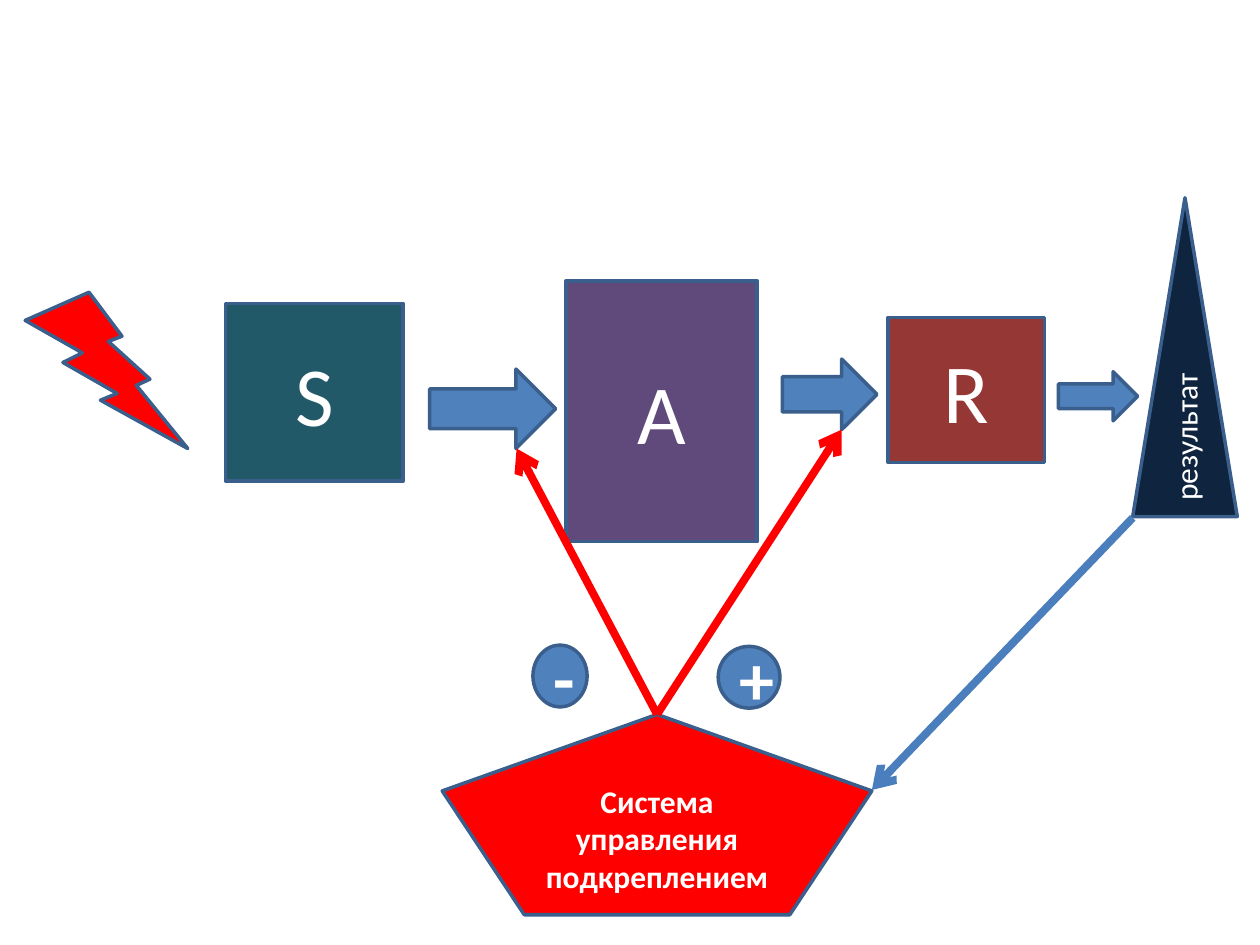
from lxml import etree
from pptx import Presentation
from pptx.dml.color import RGBColor
from pptx.enum.shapes import MSO_CONNECTOR, MSO_SHAPE
from pptx.enum.text import MSO_ANCHOR, PP_ALIGN
from pptx.oxml.ns import qn
from pptx.util import Inches, Pt

RECTANGLE, ELLIPSE = MSO_SHAPE.RECTANGLE, MSO_SHAPE.OVAL
ARROW, BOLT = MSO_SHAPE.RIGHT_ARROW, MSO_SHAPE.LIGHTNING_BOLT
TRIANGLE, PENTAGON = MSO_SHAPE.ISOSCELES_TRIANGLE, MSO_SHAPE.REGULAR_PENTAGON
STRAIGHT = MSO_CONNECTOR.STRAIGHT
MIDDLE, CENTER = MSO_ANCHOR.MIDDLE, PP_ALIGN.CENTER

# The grid has 100 columns and 75 rows of square cells
CELL = 0.1
BLUE, OUTLINE, LINK = "4F81BD", "3A5F8C", "4B7EBC"
RED, WHITE = "FF0000", "FFFFFF"


def color(value):
    return RGBColor.from_string(value)


def grid(*cells):
    return [Inches(cell * CELL) for cell in cells]


def write(shape, text, size=18, bold=False, turned=False):
    """Put centred white text into a shape."""
    frame = shape.text_frame
    frame.word_wrap = True
    frame.vertical_anchor = MIDDLE
    if turned:
        shape.element.find(".//" + qn("a:bodyPr")).set("vert", "vert270")
    para = frame.paragraphs[0]
    para.alignment = CENTER
    span = para.add_run()
    span.text = text
    span.font.name = "Calibri"
    span.font.size = Pt(size)
    span.font.bold = bold
    span.font.color.rgb = color(WHITE)


class Diagram:
    """Holds the style and the current slide."""

    def __init__(self, page, outline=OUTLINE, outline_width=2, link_width=4.5):
        self.page = page
        self.outline = outline
        self.outline_width = outline_width
        self.link_width = link_width

    def block(self, kind, place, fill=BLUE, text=None, **text_format):
        box = self.page.shapes.add_shape(kind, *grid(*place))
        box.shadow.inherit = False
        box.fill.solid()
        box.fill.fore_color.rgb = color(fill)
        box.line.color.rgb = color(self.outline)
        box.line.width = Pt(self.outline_width)
        if text:
            write(box, text, **text_format)
        return box

    def link(self, start, end, line_color, source=None):
        link = self.page.shapes.add_connector(STRAIGHT, *grid(*start, *end))
        if source is not None:
            link.begin_connect(source, 0)
        link.line.color.rgb = color(line_color)
        link.line.width = Pt(self.link_width)
        etree.SubElement(link.line._get_or_add_ln(), qn("a:tailEnd"), type="arrow")
        properties = link._element.spPr
        etree.SubElement(properties, qn("a:effectLst"))


def main():
    deck = Presentation()
    deck.slide_width, deck.slide_height = grid(100, 75)
    diagram = Diagram(deck.slides.add_slide(deck.slide_layouts[6]))

    # Stimulus, processing and reaction
    for text, fill, place in (
        ("S", "215968", (17.9, 24.1, 14.1, 14.1)),
        ("A", "604A7B", (44.9, 22.3, 15.2, 20.7)),
        ("R", "953735", (70.5, 25.2, 12.4, 11.5)),
    ):
        diagram.block(RECTANGLE, place, fill, text, size=48)

    # Block arrows between the stages
    for place in ((34.1, 29.3, 10, 6.3), (62.1, 28.5, 7.5, 5.6), (84, 29.5, 6.3, 3.9)):
        diagram.block(ARROW, place)

    # Incoming signal, result and control system
    diagram.block(BOLT, (2, 23.2, 12.9, 12.4), RED)
    diagram.block(TRIANGLE, (89.9, 15.7, 8.3, 25.3), "0F243E", "результат", turned=True)
    control = diagram.block(PENTAGON, (35.1, 56.7, 34.1, 15.9), RED,
                            "Система управления подкреплением", bold=True)

    # Feedback from the result, reinforcement to the arrows
    diagram.link((89.9, 41.1), (69.2, 62.7), LINK)
    for end in ((66.8, 34.1), (41, 35.6)):
        diagram.link((52.1, 56.7), end, RED, source=control)

    # Signs of reinforcement
    for text, place in (("-", (42.3, 51.2, 4.3, 4.9)), ("+", (57, 51.3, 4.9, 4.9))):
        diagram.block(ELLIPSE, place, BLUE, text, size=40, bold=True)

    deck.save("out.pptx")


if __name__ == "__main__":
    main()
